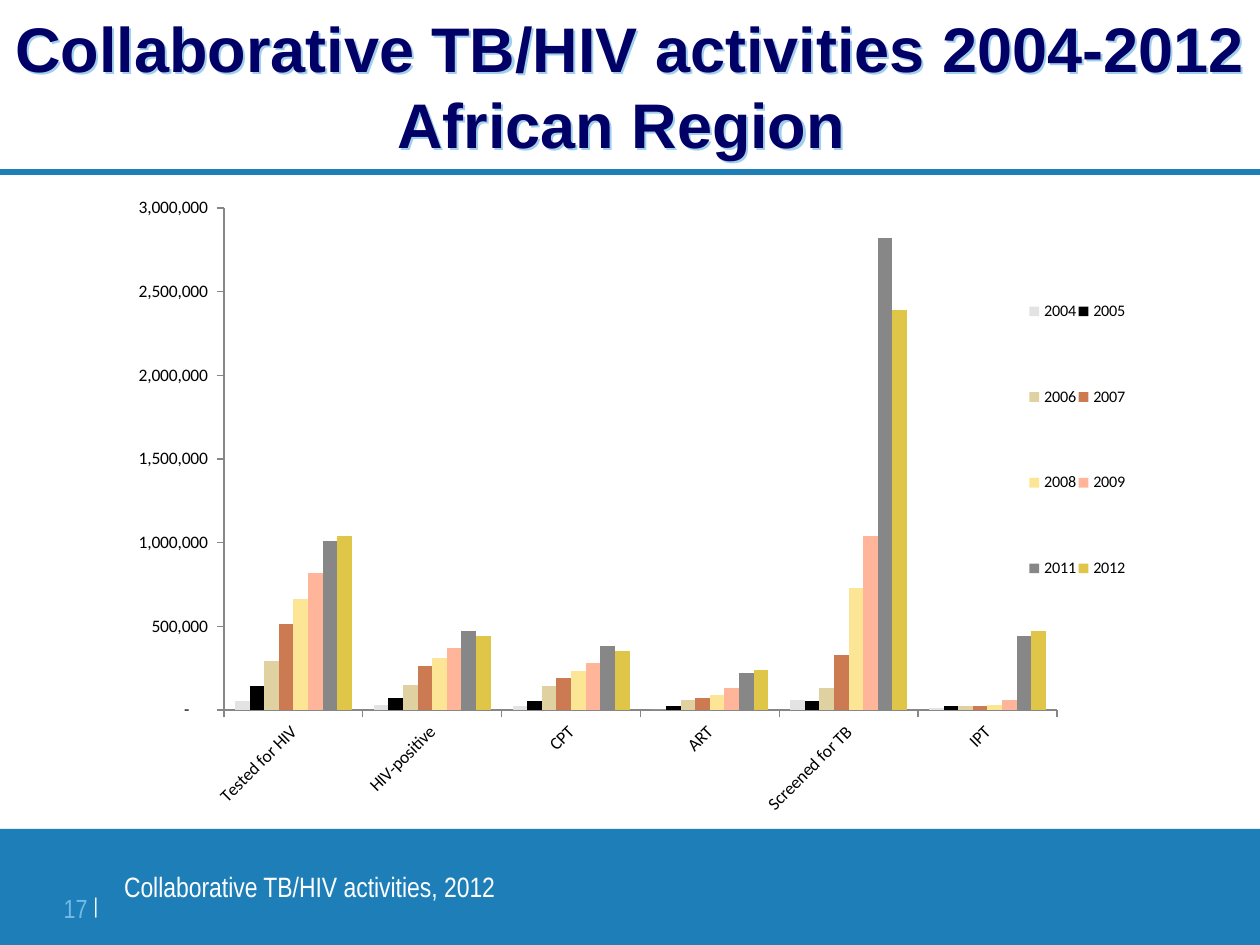
from dataclasses import dataclass
from typing import NamedTuple

from lxml import etree
from pptx import Presentation
from pptx.chart.data import CategoryChartData
from pptx.dml.color import RGBColor
from pptx.enum.chart import XL_CHART_TYPE, XL_LEGEND_POSITION, XL_TICK_LABEL_POSITION, XL_TICK_MARK
from pptx.enum.shapes import MSO_CONNECTOR, MSO_SHAPE
from pptx.enum.text import MSO_ANCHOR, PP_ALIGN
from pptx.oxml import parse_xml
from pptx.oxml.ns import nsdecls, qn
from pptx.util import Emu, Pt

COLUMNS = XL_CHART_TYPE.COLUMN_CLUSTERED
RIGHT_LEGEND = XL_LEGEND_POSITION.RIGHT
TICK_OUT, TICK_NONE = XL_TICK_MARK.OUTSIDE, XL_TICK_MARK.NONE
LABELS_LOW = XL_TICK_LABEL_POSITION.LOW
STRAIGHT, RECTANGLE = MSO_CONNECTOR.STRAIGHT, MSO_SHAPE.RECTANGLE
TOP, MIDDLE = MSO_ANCHOR.TOP, MSO_ANCHOR.MIDDLE
LEFT, CENTER, RIGHT = PP_ALIGN.LEFT, PP_ALIGN.CENTER, PP_ALIGN.RIGHT

PX_PER_INCH = 126


@dataclass(frozen=True)
class Theme:
    blue: str = "1E7FB8"
    pale_blue: str = "72BBE8"
    navy: str = "000066"
    title_shadow: str = "A0CFEB"
    white: str = "FFFFFF"
    black: str = "000000"
    axis: str = "868686"
    years: tuple[str, ...] = ("E3E3E3", "000000", "E0D2A0", "CB7A52", "FCE696",
                              "FFB59A", "FFFFFF", "878787", "DFC649")
    heading_font: str = "Arial"
    footer_font: str = "Arial Narrow"
    chart_font: str = "Calibri"
    title_size: float = 36
    footer_size: float = 16
    number_size: float = 15
    bar_size: float = 21
    axis_size: float = 10
    legend_size: float = 9.2


THEME = Theme()


class Area(NamedTuple):
    left: int
    top: int
    width: int
    height: int


class Span(NamedTuple):
    text: str
    font: str
    size: float
    color: str
    bold: bool = False


class Year(NamedTuple):
    name: str
    thousands: tuple[int, ...]


CHART_AREA = Area(115, 185, 1032, 645)
PLOT_AREA = Area(224, 208, 833, 502)
LEGEND_AREA = Area(1027, 235, 101, 410)
CATEGORIES = ("Tested for HIV", "HIV-positive", "CPT", "ART", "Screened for TB", "IPT")
YEARS = (
    Year("2004", (50, 30, 20, 0, 60, 10)),
    Year("2005", (140, 70, 50, 20, 50, 20)),
    Year("2006", (290, 150, 140, 60, 130, 20)),
    Year("2007", (510, 260, 190, 70, 330, 20)),
    Year("2008", (660, 310, 230, 90, 730, 30)),
    Year("2009", (820, 370, 280, 130, 1040, 60)),
    Year("2010", ()),
    Year("2011", (1010, 470, 380, 220, 2820, 440)),
    Year("2012", (1040, 440, 350, 240, 2390, 470)),
)


def px(length: int) -> Emu:
    return Emu(round(length * 914400 / PX_PER_INCH))


def rgb(color: str) -> RGBColor:
    return RGBColor.from_string(color)


def style_font(font, name: str, size: float, color: str, bold: bool = False) -> None:
    font.name, font.size, font.bold = name, Pt(size), bold
    font.color.rgb = rgb(color)


def add_text(slide, area: Area, spans: list[Span], align=LEFT, anchor=TOP):
    box = slide.shapes.add_textbox(*map(px, area))
    frame = box.text_frame
    frame.word_wrap = True
    frame.vertical_anchor = anchor
    frame.margin_left = frame.margin_right = frame.margin_top = frame.margin_bottom = 0
    para = frame.paragraphs[0]
    para.alignment = align
    for span in spans:
        run = para.add_run()
        run.text = span.text
        style_font(run.font, span.font, span.size, span.color, span.bold)
    return box


def add_title(slide) -> None:
    lines = ("Collaborative TB/HIV activities 2004-2012", "African Region ")
    box = add_text(slide, Area(0, 0, 1260, 170), [], CENTER, MIDDLE)
    para = box.text_frame.paragraphs[0]
    para.text = "\v".join(lines)
    for run in para.runs:
        style_font(run.font, THEME.heading_font, THEME.title_size, THEME.navy, True)
    # The box has no fill, so its shadow falls from the letters.
    box._element.spPr.append(parse_xml(
        f'<a:effectLst {nsdecls("a")}><a:outerShdw dist="{px(3)}" dir="2700000" algn="ctr" '
        f'rotWithShape="0"><a:srgbClr val="{THEME.title_shadow}"/></a:outerShdw></a:effectLst>'))


def add_rule(slide, y: int) -> None:
    rule = slide.shapes.add_connector(STRAIGHT, 0, px(y), px(1260), px(y))
    rule.line.color.rgb = rgb(THEME.blue)
    rule.line.width = Pt(3)
    etree.SubElement(rule._element.spPr, qn("a:effectLst"))


def add_footer(slide) -> None:
    band = slide.shapes.add_shape(RECTANGLE, *map(px, Area(0, 829, 1260, 116)))
    band.shadow.inherit = False
    band.fill.solid()
    band.fill.fore_color.rgb = rgb(THEME.blue)
    band.line.fill.background()
    font = THEME.footer_font
    add_text(slide, Area(124, 870, 585, 59),
             [Span("Collaborative TB/HIV activities, 2012", font, THEME.footer_size, THEME.white)])
    number = add_text(slide, Area(49, 882, 49, 45),
                      [Span("17 ", font, THEME.number_size, THEME.pale_blue),
                       Span("|", font, THEME.bar_size, THEME.white)], RIGHT)
    number.text_frame.paragraphs[0].runs[1].font._element.set("baseline", "14000")


def place_in_chart(parent, index: int, area: Area, inner: bool = False) -> None:
    """Give a chart part a manual layout, as fractions of the chart area."""
    for old in parent.findall(qn("c:layout")):
        parent.remove(old)
    layout = etree.Element(qn("c:layout"))
    manual = etree.SubElement(layout, qn("c:manualLayout"))
    settings = [("layoutTarget", "inner")] if inner else []
    settings += [("xMode", "edge"), ("yMode", "edge")]
    fractions = ((area.left - CHART_AREA.left) / CHART_AREA.width,
                 (area.top - CHART_AREA.top) / CHART_AREA.height,
                 area.width / CHART_AREA.width, area.height / CHART_AREA.height)
    settings += [(key, f"{value:.4f}") for key, value in zip("xywh", fractions)]
    for tag, value in settings:
        etree.SubElement(manual, qn(f"c:{tag}")).set("val", value)
    parent.insert(index, layout)


def style_axis(axis) -> None:
    axis.has_major_gridlines = False
    axis.major_tick_mark, axis.minor_tick_mark = TICK_OUT, TICK_NONE
    axis.format.line.color.rgb = rgb(THEME.axis)
    axis.format.line.width = Pt(0.75)
    style_font(axis.tick_labels.font, THEME.chart_font, THEME.axis_size, THEME.black)


def add_activity_chart(slide) -> None:
    data = CategoryChartData()
    data.categories = CATEGORIES
    for year in YEARS:
        data.add_series(year.name, [value * 1000 for value in year.thousands])
    chart = slide.shapes.add_chart(COLUMNS, *map(px, CHART_AREA), data).chart
    chart.has_title = False
    style_font(chart.font, THEME.chart_font, THEME.axis_size, THEME.black)
    plot = chart.plots[0]
    plot.gap_width, plot.overlap, plot.vary_by_categories = 150, 0, False
    for series, color in zip(plot.series, THEME.years):
        series.format.fill.solid()
        series.format.fill.fore_color.rgb = rgb(color)
        series.invert_if_negative = False
    for axis in (chart.category_axis, chart.value_axis):
        style_axis(axis)
    chart.category_axis.tick_label_position = LABELS_LOW
    chart.category_axis._element.find(qn("c:txPr")).find(qn("a:bodyPr")).set("rot", "-2700000")
    values = chart.value_axis
    values.minimum_scale, values.maximum_scale, values.major_unit = 0, 3_000_000, 500_000
    values.tick_labels.number_format = '_(* #,##0_);_(* \\(#,##0\\);_(* "-"??_);_('
    values.tick_labels.number_format_is_linked = False
    chart.has_legend = True
    legend = chart.legend
    legend.position, legend.include_in_layout = RIGHT_LEGEND, False
    style_font(legend.font, THEME.chart_font, THEME.legend_size, THEME.black)
    place_in_chart(legend._element, 1, LEGEND_AREA)
    place_in_chart(chart._chartSpace.chart.plotArea, 0, PLOT_AREA, inner=True)


def main() -> None:
    deck = Presentation()
    deck.slide_width, deck.slide_height = px(1260), px(945)
    slide = deck.slides.add_slide(deck.slide_layouts[6])
    add_rule(slide, 172)
    add_footer(slide)
    add_title(slide)
    add_activity_chart(slide)
    deck.save("out.pptx")


if __name__ == "__main__":
    main()
